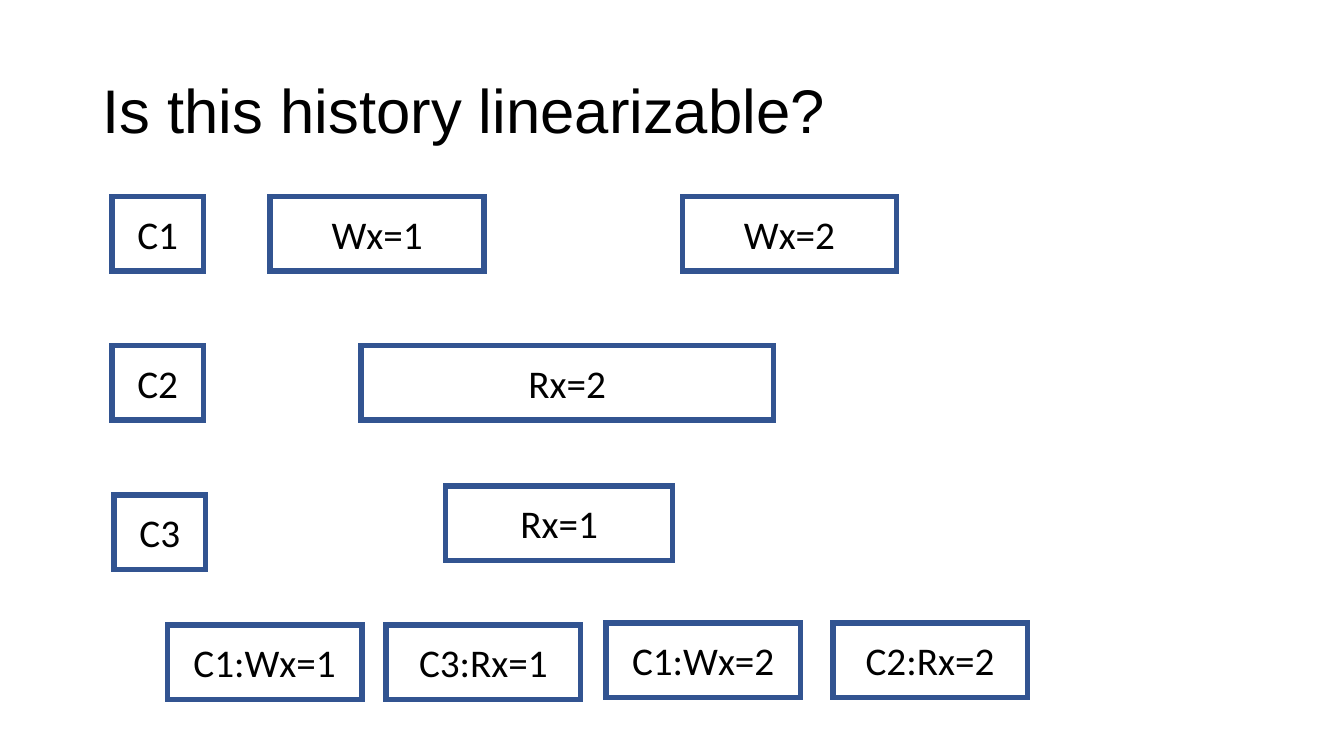
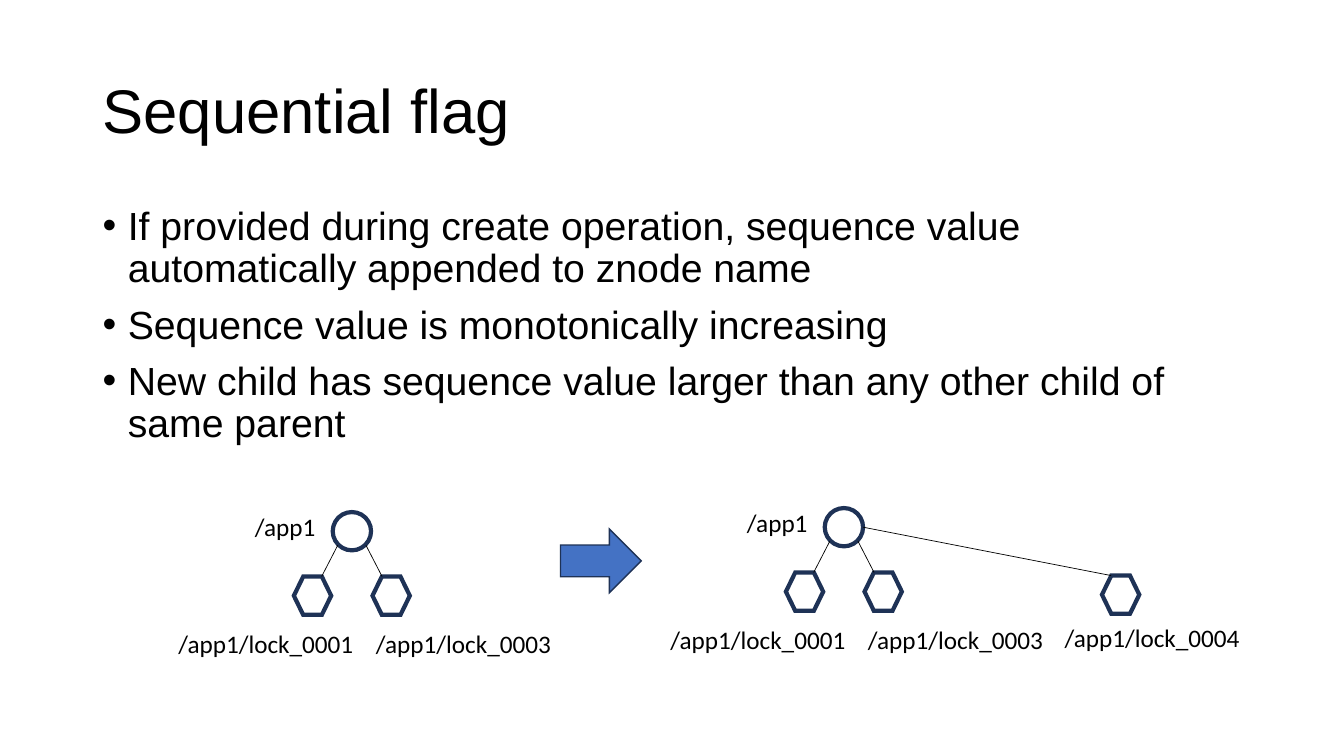
import pptx
import pptx.util
import pptx.dml.color
import pptx.enum.shapes
import pptx.enum.text
import pptx.oxml.ns
import lxml.etree

Inches = pptx.util.Inches
Pt = pptx.util.Pt
ShapeKind = pptx.enum.shapes.MSO_SHAPE
Align = pptx.enum.text.PP_ALIGN
Anchor = pptx.enum.text.MSO_ANCHOR

COLORS = {"text": "000000", "box": "325491", "node": "1E3256", "arrow": "4472C4"}
HEADING_FONT = "Arial"
LABEL_FONT = "Calibri"


def color(name):
    return pptx.dml.color.RGBColor.from_string(COLORS[name])


def add_xml(parent, tag, **attributes):
    return lxml.etree.SubElement(parent, pptx.oxml.ns.qn(tag), attributes)


class Deck:
    def __init__(self):
        self.presentation = pptx.Presentation()
        self.presentation.slide_width = Inches(13.33)
        self.presentation.slide_height = Inches(7.5)
        self.slide = None

    def start_slide(self, title):
        self.slide = self.presentation.slides.add_slide(self.presentation.slide_layouts[6])
        frame = self.text_frame(0.92, 0.4, 11.5, 1.45)
        frame.vertical_anchor = Anchor.MIDDLE
        paragraph = frame.paragraphs[0]
        self.set_text(paragraph, title, 44, HEADING_FONT)
        paragraph.line_spacing = 0.9

    def text_frame(self, left, top, width, height, wrap=True):
        shape = self.slide.shapes.add_textbox(
            Inches(left), Inches(top), Inches(width), Inches(height))
        shape.text_frame.word_wrap = wrap
        return shape.text_frame

    def set_text(self, paragraph, text, size, font):
        paragraph.text = text
        paragraph.font.size = Pt(size)
        paragraph.font.name = font
        paragraph.font.color.rgb = color("text")

    def bullets(self, left, top, width, height, items):
        frame = self.text_frame(left, top, width, height)
        for index, item in enumerate(items):
            paragraph = frame.add_paragraph() if index else frame.paragraphs[0]
            self.set_text(paragraph, item, 28, HEADING_FONT)
            paragraph.line_spacing = 0.9
            paragraph.space_before = Pt(10)
            properties = paragraph._p.get_or_add_pPr()
            properties.set("marL", str(Inches(0.25)))
            properties.set("indent", str(-Inches(0.25)))
            bullet_font = add_xml(properties, "a:buFont", typeface=HEADING_FONT)
            bullet = add_xml(properties, "a:buChar", char="•")
            default_font = properties.find(pptx.oxml.ns.qn("a:defRPr"))
            default_font.addprevious(bullet_font)
            default_font.addprevious(bullet)

    def outline(self, kind, left, top, width, height, line, weight, fill=None):
        shape = self.slide.shapes.add_shape(
            kind, Inches(left), Inches(top), Inches(width), Inches(height))
        shape.shadow.inherit = False
        if fill:
            shape.fill.solid()
            shape.fill.fore_color.rgb = color(fill)
        else:
            shape.fill.background()
        shape.line.color.rgb = color(line)
        shape.line.width = Pt(weight)
        add_xml(shape.line._get_or_add_ln(), "a:miter", lim="800000")
        return shape

    def box(self, text, left, top, width):
        shape = self.outline(ShapeKind.RECTANGLE, left, top, width, 0.74, "box", 4)
        shape.text_frame.vertical_anchor = Anchor.MIDDLE
        paragraph = shape.text_frame.paragraphs[0]
        self.set_text(paragraph, text, 28, LABEL_FONT)
        paragraph.alignment = Align.CENTER

    def label(self, text, left, top, width=1.96):
        frame = self.text_frame(left, top, width, 0.4, wrap=False)
        self.set_text(frame.paragraphs[0], text, 18, LABEL_FONT)

    def parent_node(self, left, top):
        self.outline(ShapeKind.OVAL, left, top, 0.38, 0.38, "node", 3)

    def child_node(self, left, top):
        self.outline(ShapeKind.HEXAGON, left, top, 0.37, 0.38, "node", 3)

    def edge(self, start_x, start_y, end_x, end_y):
        connector = self.slide.shapes.add_connector(
            pptx.enum.shapes.MSO_CONNECTOR.STRAIGHT,
            Inches(start_x), Inches(start_y), Inches(end_x), Inches(end_y))
        connector.line.color.rgb = color("text")
        connector.line.width = Pt(0.5)
        add_xml(connector._element.spPr, "a:effectLst")

    def lock_tree(self, left, top):
        self.parent_node(left, top)
        self.label("/app1", left - 0.87, top - 0.06, 0.81)
        center = left + 0.19
        for side, number, label_left in ((-1, 1, -1.63), (1, 3, 0.33)):
            self.child_node(center + side * 0.39 - 0.37 / 2, top + 0.64)
            self.edge(center + side * 0.3, top + 0.64, center + side * 0.14, top + 0.33)
            self.label(f"/app1/lock_{number:04d}", left + label_left, top + 1.1)


def history_slide(deck):
    deck.start_slide("Is this history linearizable?")
    for client, left, top in (("C1", 1.11, 1.95), ("C2", 1.11, 3.43), ("C3", 1.13, 4.91)):
        deck.box(client, left, top, 0.91)
    operations = (
        ("Wx=1", 2.68, 1.95, 2.12),
        ("Wx=2", 6.77, 1.95, 2.12),
        ("Rx=2", 3.58, 3.43, 4.09),
        ("Rx=1", 4.42, 4.82, 2.25),
    )
    for operation in operations:
        deck.box(*operation)
    ordering = (
        ("C1:Wx=1", 1.66, 6.2),
        ("C3:Rx=1", 3.83, 6.2),
        ("C1:Wx=2", 6.01, 6.18),
        ("C2:Rx=2", 8.26, 6.18),
    )
    for text, left, top in ordering:
        deck.box(text, left, top, 1.93)


def sequential_slide(deck):
    deck.start_slide("Sequential flag")
    deck.bullets(0.92, 2, 11.5, 2.66, (
        "If provided during create operation, sequence value automatically appended to znode name",
        "Sequence value is monotonically increasing",
        "New child has sequence value larger than any other child of same parent",
    ))
    deck.lock_tree(3.3, 5.08)
    deck.lock_tree(8.18, 5.04)
    deck.child_node(10.93, 5.71)
    deck.edge(11.02, 5.71, 8.56, 5.23)
    deck.label("/app1/lock_0004", 10.46, 6.12)
    deck.outline(ShapeKind.RIGHT_ARROW, 5.56, 5.25, 0.8, 0.63, "node", 1, fill="arrow")


def main():
    deck = Deck()
    history_slide(deck)
    sequential_slide(deck)
    deck.presentation.save("out.pptx")


if __name__ == "__main__":
    main()
